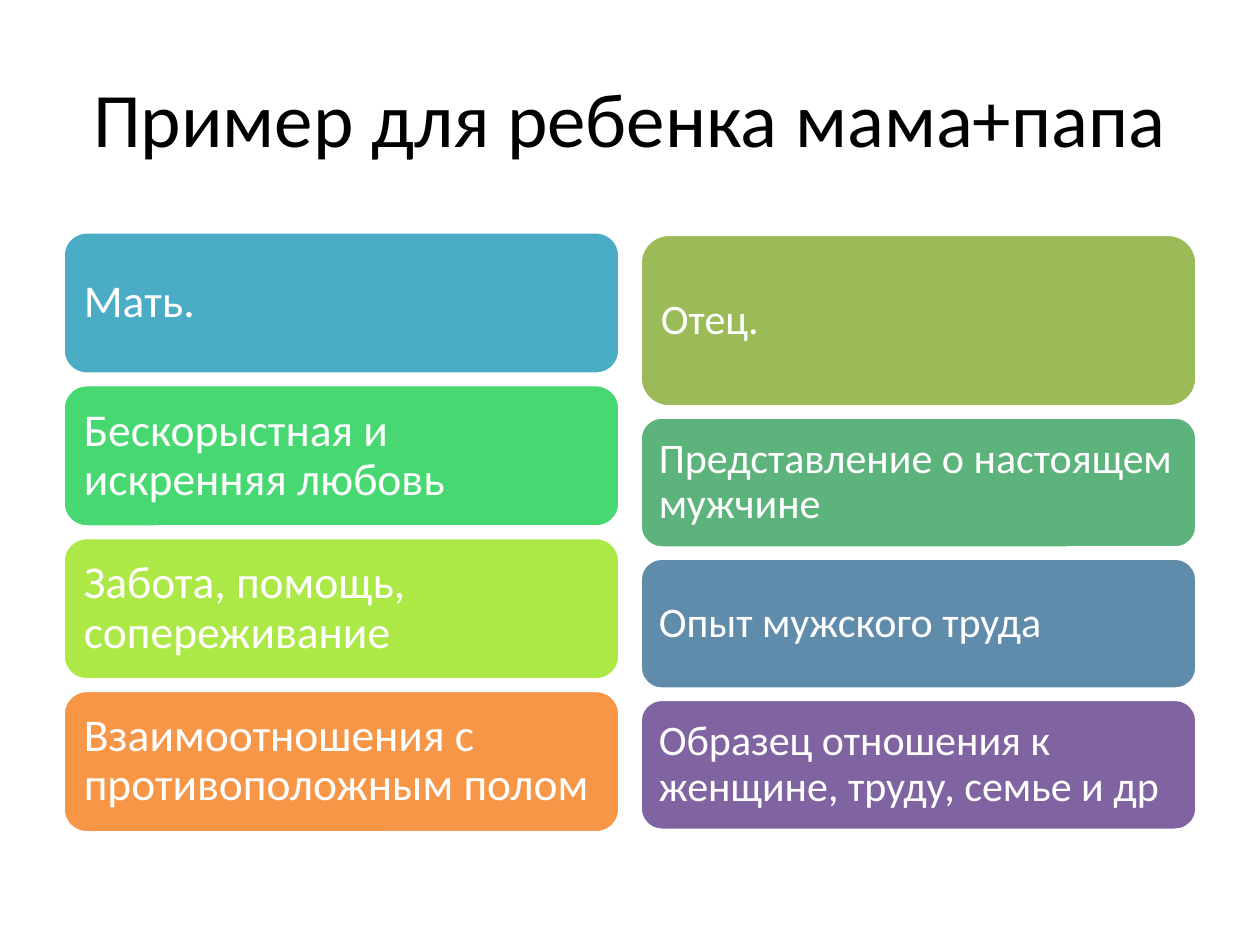
from pptx import Presentation
from pptx.dml.color import RGBColor
from pptx.enum.shapes import MSO_SHAPE
from pptx.enum.text import MSO_ANCHOR, PP_ALIGN
from pptx.util import Inches, Pt

BLACK = RGBColor(0x00, 0x00, 0x00)
WHITE = RGBColor(0xFF, 0xFF, 0xFF)
TEAL = RGBColor(0x4B, 0xAC, 0xC6)
GREEN = RGBColor(0x47, 0xD8, 0x72)
LIME = RGBColor(0xAC, 0xE9, 0x46)
ORANGE = RGBColor(0xF7, 0x96, 0x46)
OLIVE = RGBColor(0x9B, 0xBB, 0x59)
SEA_GREEN = RGBColor(0x5C, 0xB3, 0x7C)
STEEL = RGBColor(0x60, 0x8C, 0xAB)
PURPLE = RGBColor(0x80, 0x64, 0xA2)

MARGIN = 0.5
COLUMN_WIDTH = 4.42
COLUMN_STEP = 4.58

# Per column: top, bottom, text size, inset, cards (text, fill, height)
COLUMNS = [
    (1.84, 6.61, 26, 0.11, [
        ("Мать.", TEAL, 1.13),
        ("Бескорыстная и искренняя любовь", GREEN, 1.13),
        ("Забота, помощь, сопереживание", LIME, 1.13),
        ("Взаимоотношения с противоположным полом", ORANGE, 1.13),
    ]),
    (1.86, 6.59, 24, 0.1, [
        ("Отец.", OLIVE, 1.37),
        ("Представление о настоящем мужчине", SEA_GREEN, 1.04),
        ("Опыт мужского труда", STEEL, 1.04),
        ("Образец отношения к женщине, труду, семье и др", PURPLE, 1.04),
    ]),
]


def write_text(shape, text, size, color, align):
    frame = shape.text_frame
    frame.word_wrap = True
    frame.vertical_anchor = MSO_ANCHOR.MIDDLE
    frame.text = text
    para = frame.paragraphs[0]
    para.alignment = align
    font = para.runs[0].font
    font.name = "Calibri"
    font.size = Pt(size)
    font.color.rgb = color
    return frame


deck = Presentation()
deck.slide_width, deck.slide_height = Inches(10), Inches(7.5)
page = deck.slides.add_slide(deck.slide_layouts[6])

title = page.shapes.add_textbox(Inches(MARGIN), Inches(0.3), Inches(9), Inches(1.25))
write_text(title, "Пример для ребенка мама+папа", 44, BLACK, PP_ALIGN.CENTER)

for column, (top, bottom, size, inset, cards) in enumerate(COLUMNS):
    group = page.shapes.add_group_shape()
    left = MARGIN + column * COLUMN_STEP
    gap = (bottom - top - sum(height for _, _, height in cards)) / (len(cards) - 1)
    for text, fill, height in cards:
        card = group.shapes.add_shape(
            MSO_SHAPE.ROUNDED_RECTANGLE,
            Inches(left), Inches(top), Inches(COLUMN_WIDTH), Inches(height))
        card.shadow.inherit = False
        card.fill.solid()
        card.fill.fore_color.rgb = fill
        card.line.color.rgb = WHITE
        card.line.width = Pt(2)
        frame = write_text(card, text, size, WHITE, PP_ALIGN.LEFT)
        frame.margin_left = frame.margin_right = Inches(inset)
        frame.margin_top = frame.margin_bottom = Inches(inset)
        frame.paragraphs[0].line_spacing = 0.9
        top += height + gap

deck.save("out.pptx")
